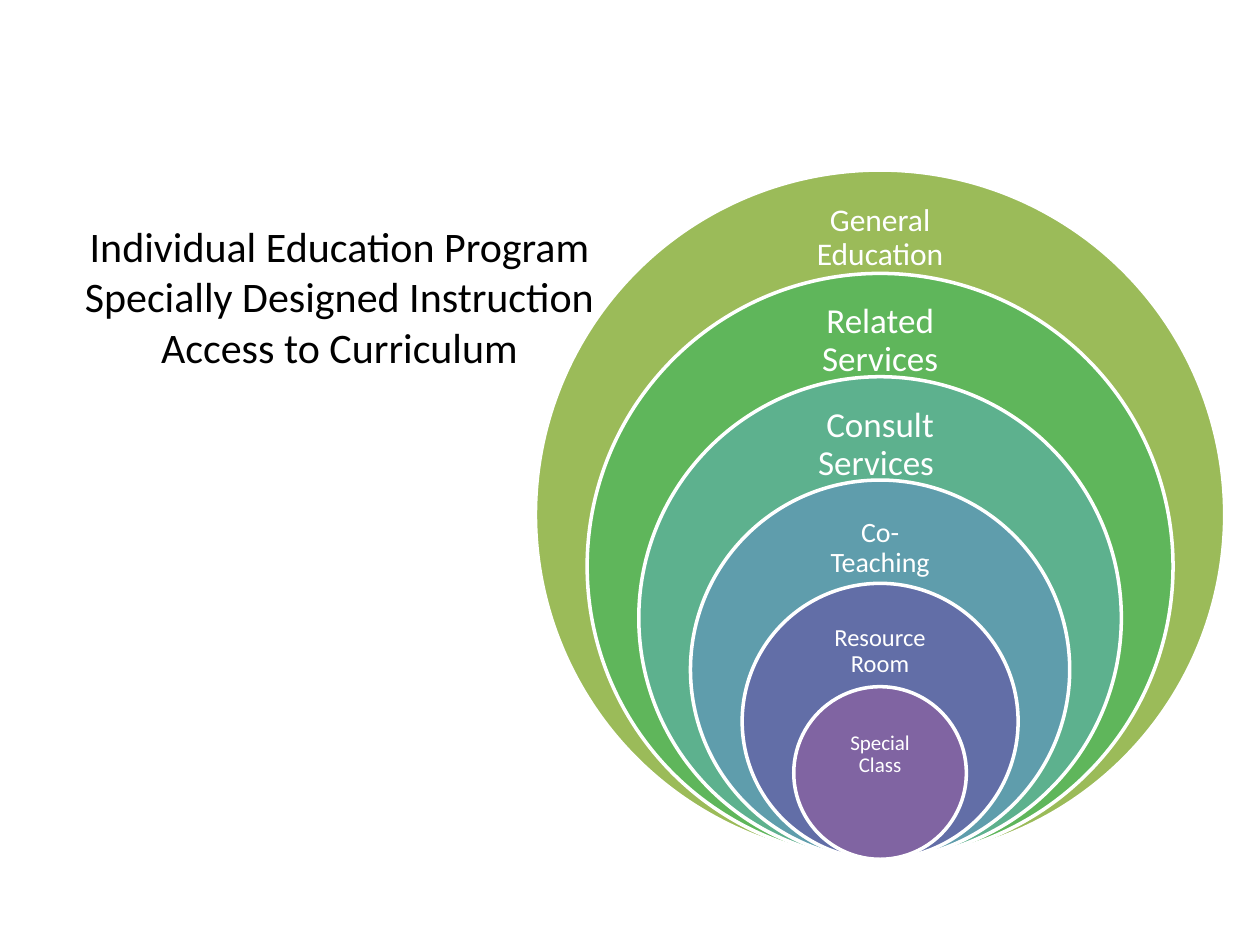
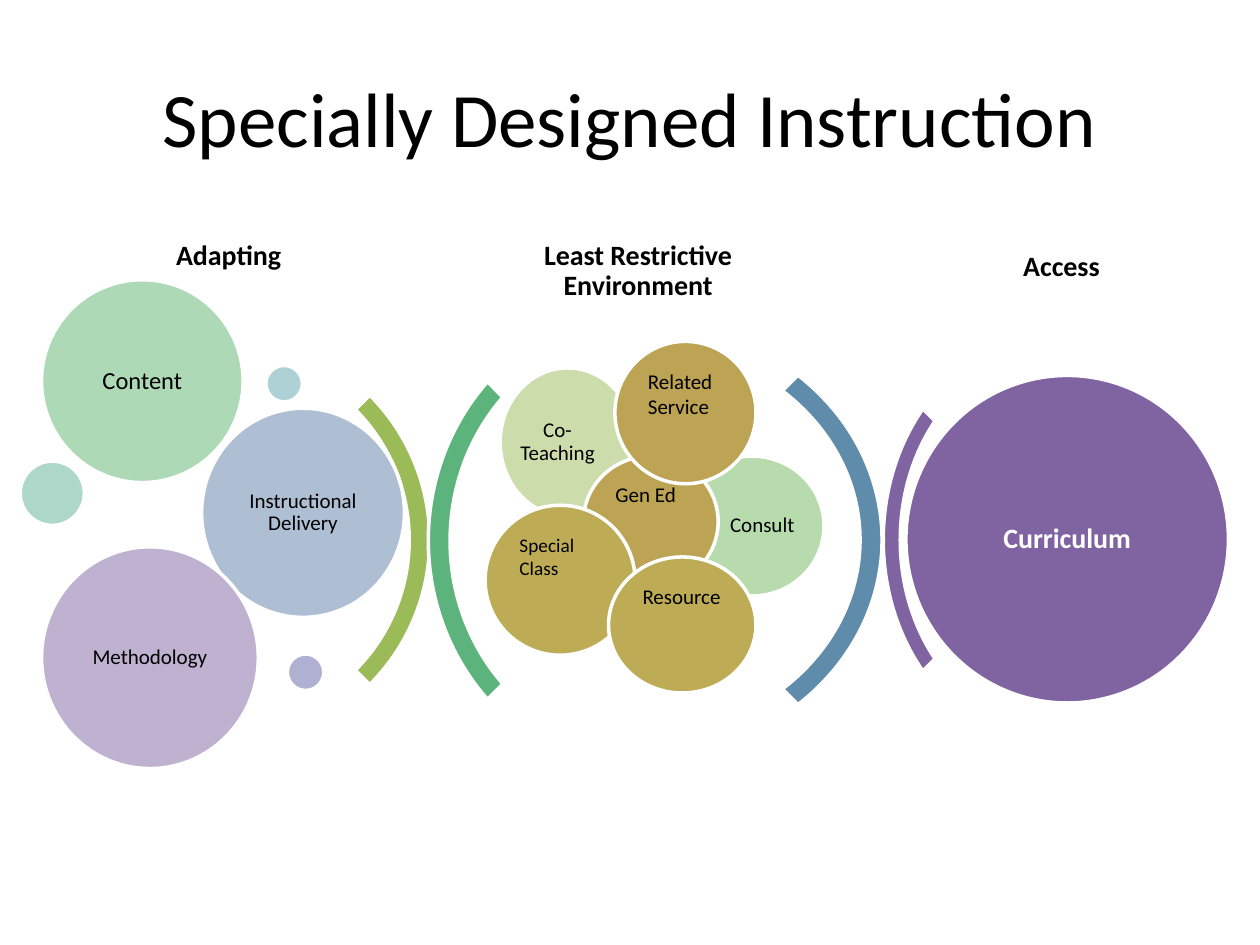
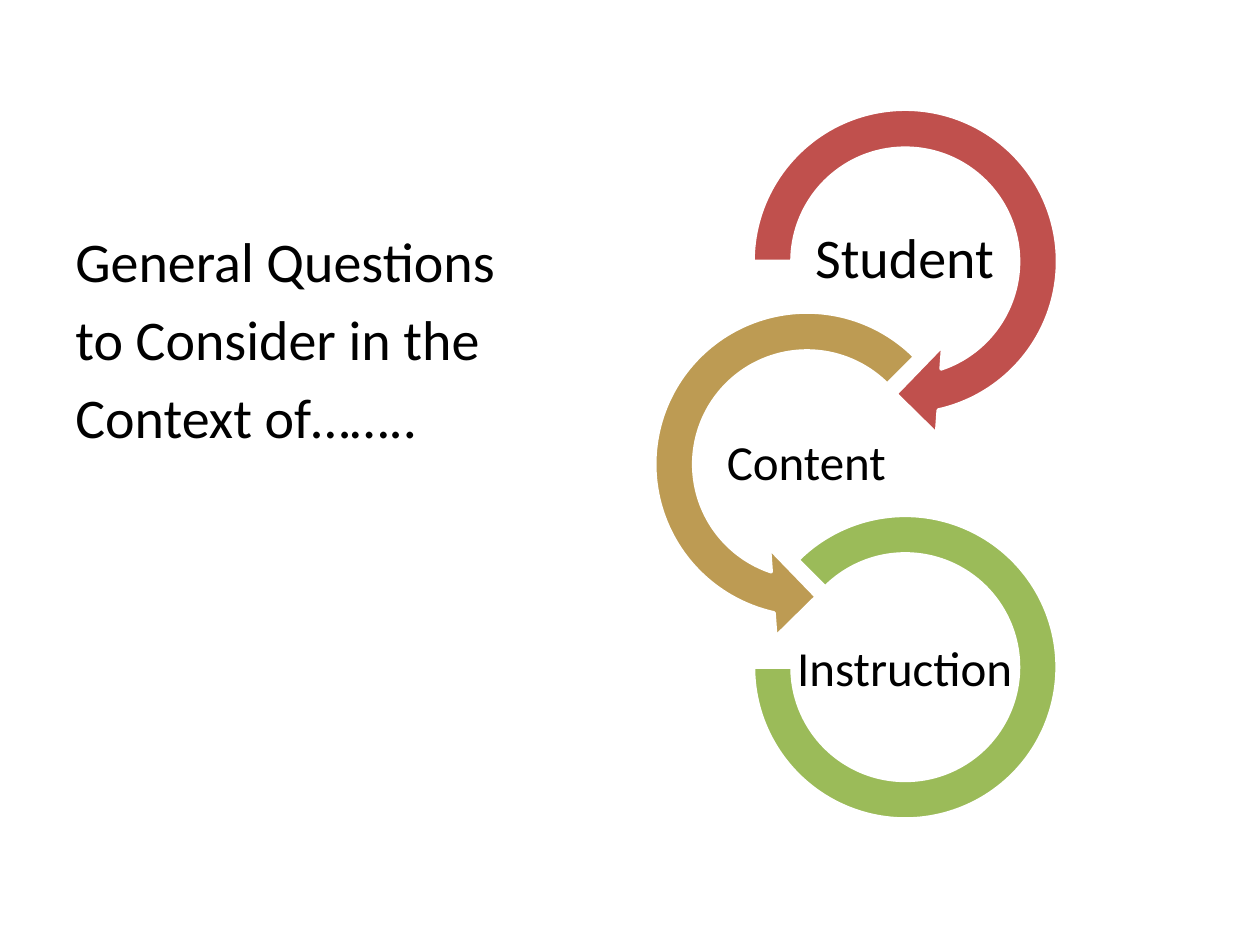
import pptx
import pptx.util
import pptx.dml.color
import pptx.enum.shapes
import pptx.enum.text
import pptx.oxml
import pptx.oxml.ns

Inches, Pt = pptx.util.Inches, pptx.util.Pt
SHAPE = pptx.enum.shapes.MSO_SHAPE
ALIGN = pptx.enum.text.PP_ALIGN
ANCHOR = pptx.enum.text.MSO_ANCHOR

FONT, BLACK, WHITE = "Calibri", "000000", "FFFFFF"
GREEN, PURPLE, RED, OCHRE = "9BBB59", "8064A2", "C0504D", "BD9B53"

# Slide 1: service levels, outermost first: label, size, label width, fill
LEVELS = [
    ("General Education", 18, 1.45, GREEN),
    ("Related Services", 20, 1.42, "5FB65B"),
    ("Consult Services ", 20, 1.4, "5DB18E"),
    ("Co-Teaching", 16, 1.15, "5F9DAC"),
    ("Resource Room", 14, 1, "626EA7"),
    ("Special Class", 12, 0.68, PURPLE),
]
IEP_LINES = ["Individual Education Program", "Specially Designed Instruction",
             "Access to Curriculum"]

# Slide 2: brackets, headings, bubbles
TITLE = "Specially Designed Instruction"
BRACKETS = [  # box, rotation, fill
    ((0.16, 2.66, 3.25, 3.25), 90, GREEN),
    ((3.29, 2.56, 3.68, 3.46), 270, "5CB37C"),
    ((3.28, 2.31, 3.49, 3.95), 90, "608CAB"),
    ((6.74, 2.93, 3.25, 2.71), 270, PURPLE),
]
HEADINGS = [("Adapting", 0.58, 1.71), ("Least Restrictive Environment", 3.83, 1.83),
            ("Access", 7.19, 1.8)]
SOFT_BUBBLES = [  # label, size, box, fill, label shift to the right
    ("Co-Teaching", 12, (3.97, 2.92, 1.07, 1.18), GREEN, -0.08),
    ("Consult", 12, (5.4, 3.62, 1.14, 1.11), "70B85A", 0.08),
    ("Content", 14, (0.33, 2.22, 1.6, 1.61), "5CB46F", 0),
    ("", 12, (0.16, 3.66, 0.51, 0.51), "5DB195", 0),
    ("", 12, (2.11, 2.9, 0.29, 0.29), "5FA4AD", 0),
    ("Instructional Delivery", 12, (1.6, 3.24, 1.61, 1.66), "6181A9", 0),
    ("", 12, (2.28, 5.19, 0.29, 0.29), "6362A6", 0),
    ("Methodology", 12, (0.33, 4.34, 1.72, 1.76), PURPLE, 0),
]
CURRICULUM_BOX = (7.19, 2.98, 2.56, 2.6)
SETTINGS = [  # label, size, box, fill
    ("Gen Ed", 12, (4.63, 3.62, 1.07, 1.04), "BDA354"),
    ("Related Service", 12, (4.88, 2.71, 1.12, 1.13), "BDA354"),
    ("Special Class", 11, (3.85, 4.01, 1.19, 1.19), "BDAC55"),
    ("Resource", 12, (4.83, 4.42, 1.17, 1.08), "BDAC55"),
]

# Slide 3: chain of questions
QUESTION_LINES = ["General Questions", "to Consider in the", "Context of…….."]
CHAIN = [  # label, size, label box, shape, box, adjustments, fill
    ("Student", 32, (6.4, 1.68, 1.56, 0.78), SHAPE.CIRCULAR_ARROW,
     (5.78, 0.67, 2.81, 2.81), (0.11, 11.42, 45, 108, 0.125), RED),
    ("Content", 28, (5.62, 3.3, 1.56, 0.78), SHAPE.LEFT_CIRCULAR_ARROW,
     (5, 2.28, 2.81, 2.81), (0.11, 11.42, 63, 189, 0.125), OCHRE),
    ("Instruction", 28, (6.26, 4.84, 1.84, 0.96), SHAPE.BLOCK_ARC,
     (5.98, 4.09, 2.41, 2.41), (135, 108, 0.127), GREEN),
]


def rgb(hex_color):
    return pptx.dml.color.RGBColor.from_string(hex_color)


def write(frame, lines, size, color=BLACK, bold=False, align=ALIGN.CENTER,
          anchor=ANCHOR.MIDDLE, spacing=None, before=None):
    frame.word_wrap = True
    frame.vertical_anchor = anchor
    frame.text = "\n".join(lines)
    for paragraph in frame.paragraphs:
        paragraph.alignment = align
        paragraph.line_spacing = spacing
        paragraph.space_before = before
        font = paragraph.font
        font.name, font.size, font.bold = FONT, Pt(size), bold
        font.color.rgb = rgb(color)


def add_text(slide, box, lines, size, inset=None, **style):
    frame = slide.shapes.add_textbox(*map(Inches, box)).text_frame
    if inset is not None:
        frame.margin_left = frame.margin_right = Inches(inset)
        frame.margin_top = frame.margin_bottom = Inches(inset)
    write(frame, lines, size, **style)


def add_label(slide, box, label, size, inset=0.05, **style):
    add_text(slide, box, [label], size, inset, spacing=0.9, **style)


def add_outlined(slide, kind, box, fill, adjustments=(), rotation=0, alpha=None):
    shape = slide.shapes.add_shape(kind, *map(Inches, box))
    shape.shadow.inherit = False
    shape.rotation = rotation
    for index, value in enumerate(adjustments):
        shape.adjustments[index] = value
    shape.fill.solid()
    shape.fill.fore_color.rgb = rgb(fill)
    if alpha:
        color = shape.fill._xPr.find(".//" + pptx.oxml.ns.qn("a:srgbClr"))
        color.append(pptx.oxml.parse_xml(
            f'<a:alpha {pptx.oxml.ns.nsdecls("a")} val="{alpha * 1000}"/>'))
    shape.line.color.rgb = rgb(WHITE)
    shape.line.width = Pt(2)
    return shape


def inner_box(box, shift=0):
    """The box in the middle of an ellipse that holds its label."""
    left, top, width, height = box
    margin = (1 - 0.71) / 2
    return (left + width * margin + shift, top + height * margin,
            width * 0.71, height * 0.71)


def build_levels(slide):
    center, bottom, outer, step = 6.985, 6.82, 5.47, 0.82
    for index, (label, size, label_width, fill) in enumerate(LEVELS):
        diameter = outer - step * index
        top = bottom - diameter
        add_outlined(slide, SHAPE.OVAL, (center - diameter / 2, top, diameter, diameter), fill)
        add_label(slide, (center - label_width / 2, top + 0.35, label_width, 0.38),
                  label, size, inset=size / 128, color=WHITE)
    add_text(slide, (0.23, 1.7, 4.93, 1.31), IEP_LINES, 24, anchor=ANCHOR.TOP)


def build_instruction(slide):
    add_text(slide, (0.5, 0.3, 9, 1.25), [TITLE], 44)
    for box, rotation, fill in BRACKETS:
        add_outlined(slide, SHAPE.BLOCK_ARC, box, fill, (135, 189, 0.05), rotation)
    for heading, left, top in HEADINGS:
        add_label(slide, (left, top, 2.47, 0.65), heading, 16, bold=True)
    for label, size, box, fill, shift in SOFT_BUBBLES:
        add_outlined(slide, SHAPE.OVAL, box, fill, alpha=50)
        if label:
            add_label(slide, inner_box(box, shift), label, size, inset=0.04)
    add_outlined(slide, SHAPE.OVAL, CURRICULUM_BOX, PURPLE)
    add_label(slide, inner_box(CURRICULUM_BOX), "Curriculum", 16, color=WHITE, bold=True)
    for label, size, box, fill in SETTINGS:
        setting = add_outlined(slide, SHAPE.OVAL, box, fill)
        write(setting.text_frame, [label], size, align=ALIGN.LEFT, anchor=ANCHOR.TOP)


def build_questions(slide):
    add_text(slide, (0.5, 1.75, 9, 4.95), QUESTION_LINES, 32, align=ALIGN.LEFT,
             anchor=ANCHOR.TOP, before=Pt(6))
    for label, size, label_box, kind, box, adjustments, fill in CHAIN:
        add_outlined(slide, kind, box, fill, adjustments)
        add_label(slide, label_box, label, size, inset=0.02)


def main():
    deck = pptx.Presentation()
    deck.slide_width, deck.slide_height = Inches(10), Inches(7.5)
    for build in (build_levels, build_instruction, build_questions):
        build(deck.slides.add_slide(deck.slide_layouts[6]))
    deck.save("out.pptx")


if __name__ == "__main__":
    main()
